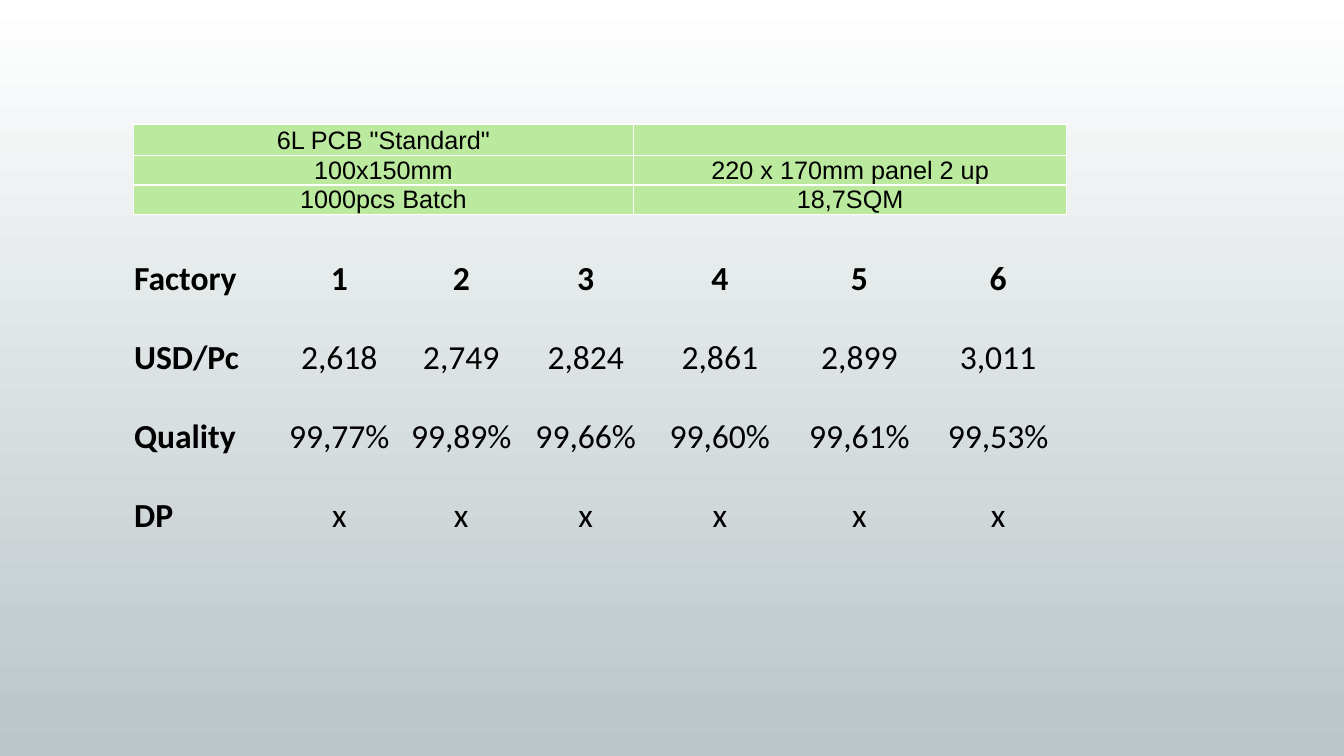
from lxml.etree import SubElement
from pptx import Presentation
from pptx.dml.color import RGBColor
from pptx.enum.shapes import MSO_SHAPE
from pptx.enum.text import MSO_ANCHOR as Anchor, PP_ALIGN as Align
from pptx.oxml import parse_xml
from pptx.oxml.ns import nsdecls, qn
from pptx.util import Inches, Pt

COLORS = {"text": "000000", "green": "BBE99D", "border": "FFFFFF",
          "sky": "FFFFFF", "ground": "B9C5C8"}
PLAIN_STYLE = "{2D5ABB26-0587-4C30-8999-92F81FD0307C}"
LEFT, WIDTH = 1.32, 9.26

BATCH_ROWS = [
    ['6L PCB "Standard"', ""],
    ["100x150mm", "220 x 170mm panel 2 up"],
    ["1000pcs Batch", "18,7SQM"],
]
FACTORY_ROWS = [
    ["Factory", "1", "2", "3", "4", "5", "6"],
    ["USD/Pc", "2,618", "2,749", "2,824", "2,861", "2,899", "3,011"],
    ["Quality", "99,77%", "99,89%", "99,66%", "99,60%", "99,61%", "99,53%"],
    ["DP"] + ["x"] * 6,
]


def color(name):
    """Return the named colour."""
    return RGBColor.from_string(COLORS[name])


def write_cell(cell, text, *, font, size, bold=False, align=Align.CENTER, anchor=Anchor.MIDDLE):
    """Write formatted text into a table cell with narrow margins."""
    cell.margin_left = cell.margin_right = cell.margin_top = Inches(0.01)
    cell.margin_bottom = 0
    cell.vertical_anchor = anchor
    paragraph = cell.text_frame.paragraphs[0]
    paragraph.alignment = align
    paragraph.font.size = Pt(size)
    if text:
        run = paragraph.add_run()
        run.text = text
        run.font.name, run.font.size, run.font.bold = font, Pt(size), bold
        run.font.color.rgb = color("text")


def add_borders(cell, name, width):
    """Draw a solid line on all four sides of a cell."""
    properties = cell._tc.get_or_add_tcPr()
    for index, side in enumerate(("lnL", "lnR", "lnT", "lnB")):
        line = parse_xml(f'<a:{side} {nsdecls("a")} w="{Pt(width)}"/>')
        fill = SubElement(line, qn("a:solidFill"))
        SubElement(fill, qn("a:srgbClr"), val=COLORS[name])
        properties.insert(index, line)


def add_plain_table(slide, rows, box, column_weights, row_weights):
    """Add an unstyled table whose columns and rows share the box by weight."""
    left, top, width, height = box
    frame = slide.shapes.add_table(len(rows), len(rows[0]), *map(Inches, box))
    table = frame.table
    table.first_row = table.horz_banding = False
    table._tbl.tblPr.find(qn("a:tableStyleId")).text = PLAIN_STYLE
    for column, weight in zip(table.columns, column_weights):
        column.width = Inches(width * weight / sum(column_weights))
    for row, weight in zip(table.rows, row_weights):
        row.height = Inches(height * weight / sum(row_weights))
    return table


def add_backdrop(slide, width, height):
    """Cover the slide with a vertical gradient."""
    backdrop = slide.shapes.add_shape(MSO_SHAPE.RECTANGLE, 0, 0, width, height)
    backdrop.shadow.inherit = False
    backdrop.line.fill.background()
    backdrop.fill.gradient()
    backdrop.fill.gradient_angle = 90
    for stop, name in zip(backdrop.fill.gradient_stops, ("ground", "sky")):
        stop.color.rgb = color(name)


def add_factory_table(slide, box):
    """Add the comparison of the six factories."""
    table = add_plain_table(slide, FACTORY_ROWS, box,
                            [1.43, 1.23, 1.19, 1.28, 1.38, 1.39, 1.36], [1] * 4)
    for row, texts in enumerate(FACTORY_ROWS):
        for column, text in enumerate(texts):
            cell = table.cell(row, column)
            cell.fill.background()
            write_cell(cell, text, font="Calibri", size=24, bold=row == 0 or column == 0,
                       align=Align.CENTER if column else Align.LEFT, anchor=Anchor.BOTTOM)


def add_batch_table(slide, box):
    """Add the green table that describes the batch."""
    table = add_plain_table(slide, BATCH_ROWS, box, [4.97, 4.3], [0.31, 0.29, 0.29])
    for row, texts in enumerate(BATCH_ROWS):
        for column, text in enumerate(texts):
            cell = table.cell(row, column)
            cell.fill.solid()
            cell.fill.fore_color.rgb = color("green")
            add_borders(cell, "border", 1)
            write_cell(cell, text, font="Arial", size=18)


def main():
    """Build and save the presentation."""
    presentation = Presentation()
    presentation.slide_width, presentation.slide_height = Inches(13.33), Inches(7.5)
    slide = presentation.slides.add_slide(presentation.slide_layouts[6])
    add_backdrop(slide, presentation.slide_width, presentation.slide_height)
    add_factory_table(slide, (LEFT, 2.19, WIDTH, 3.13))
    add_batch_table(slide, (LEFT, 1.23, WIDTH, 0.89))
    presentation.save("out.pptx")


if __name__ == "__main__":
    main()
